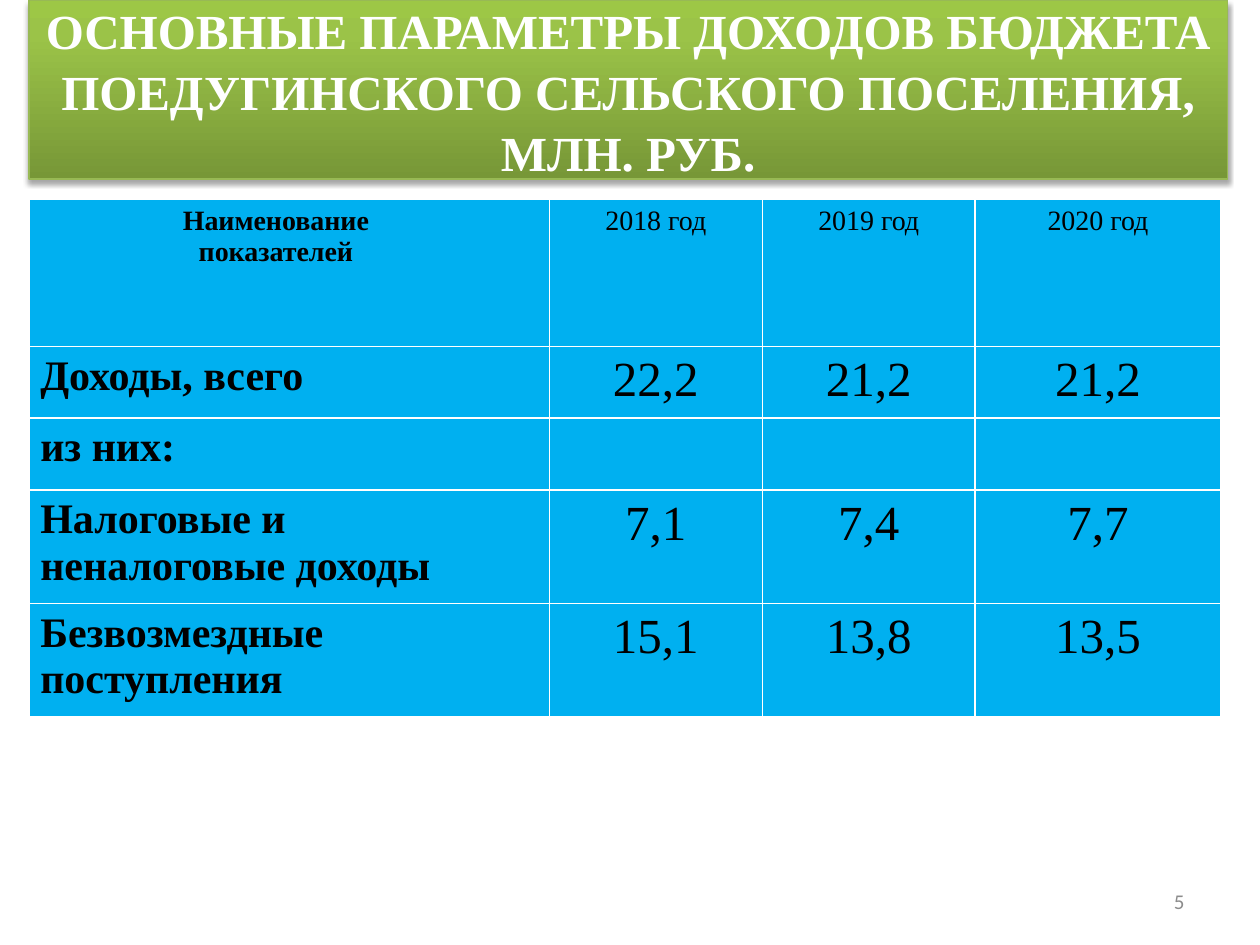
from dataclasses import dataclass

from lxml import etree
from pptx import Presentation
from pptx.dml.color import RGBColor
from pptx.enum.text import MSO_ANCHOR, MSO_AUTO_SIZE, PP_ALIGN
from pptx.oxml.ns import qn
from pptx.util import Inches, Pt

LEFT, CENTER, RIGHT = PP_ALIGN.LEFT, PP_ALIGN.CENTER, PP_ALIGN.RIGHT
MIDDLE = MSO_ANCHOR.MIDDLE
TITLE_ONLY = 5


@dataclass(frozen=True)
class Theme:
    font: str = "Times New Roman"
    number_font: str = "Calibri"
    white: str = "FFFFFF"
    black: str = "000000"
    gray: str = "8C8C8C"
    cell: str = "00B0F0"
    title_line: str = "98B955"
    title_gradient: tuple = ((0, "779737"), (80, "9BC348"), (100, "9DC746"))
    title_size: int = 28
    header_size: int = 16
    label_size: int = 24
    value_size: int = 28
    number_size: int = 12


TITLE = "ОСНОВНЫЕ ПАРАМЕТРЫ ДОХОДОВ БЮДЖЕТА ПОЕДУГИНСКОГО СЕЛЬСКОГО ПОСЕЛЕНИЯ, МЛН. РУБ."
BUDGET_ROWS = [
    ("Наименование\nпоказателей", "2018 год", "2019 год", "2020 год"),
    ("Доходы, всего", "22,2", "21,2", "21,2"),
    ("из них:", "", "", ""),
    ("Налоговые и неналоговые доходы", "7,1", "7,4", "7,7"),
    ("Безвозмездные поступления", "15,1", "13,8", "13,5"),
]
COLUMN_WIDTHS = (4.13, 1.69, 1.69, 1.95)
ROW_HEIGHTS = (1.17, 0.57, 0.57, 0.9, 0.9)


def add_child(parent, tag, **attributes):
    values = {name: str(value) for name, value in attributes.items()}
    return etree.SubElement(parent, qn(tag), values)


class SlideBuilder:
    def __init__(self, slide, theme):
        self.slide = slide
        self.theme = theme

    def format_text(self, text_frame, size, color, align, bold=False, font=None):
        for paragraph in text_frame.paragraphs:
            paragraph.alignment = align
            for run in paragraph.runs:
                run.font.name = font or self.theme.font
                run.font.size = Pt(size)
                run.font.bold = bold
                run.font.color.rgb = RGBColor.from_string(color)

    def title(self, text, left, top, width, height):
        shape = self.slide.shapes.title
        shape.left, shape.top = Inches(left), Inches(top)
        shape.width, shape.height = Inches(width), Inches(height)
        text_frame = shape.text_frame
        text_frame.text = text
        text_frame.word_wrap = True
        text_frame.auto_size = MSO_AUTO_SIZE.NONE
        text_frame.vertical_anchor = MIDDLE
        text_frame.paragraphs[0].line_spacing = 1.04
        self.format_text(text_frame, self.theme.title_size, self.theme.white, CENTER, True)
        self.gradient(shape, self.theme.title_gradient)
        shape.line.color.rgb = RGBColor.from_string(self.theme.title_line)
        shape.line.width = Pt(0.75)
        self.shadow(shape)

    def gradient(self, shape, stops):
        """Fill the shape from bottom to top with (percent, colour) stops."""
        shape.fill.gradient()
        shape.fill.gradient_angle = 90
        stop_list = shape.element.spPr.find(".//" + qn("a:gsLst"))
        for old_stop in list(stop_list):
            stop_list.remove(old_stop)
        for percent, color in stops:
            stop = add_child(stop_list, "a:gs", pos=percent * 1000)
            add_child(stop, "a:srgbClr", val=color)

    def shadow(self, shape):
        effects = add_child(shape.element.spPr, "a:effectLst")
        outer = add_child(effects, "a:outerShdw", blurRad=Pt(3.1), dist=Pt(1.8),
                          dir=90 * 60000, rotWithShape=0)
        color = add_child(outer, "a:srgbClr", val=self.theme.black)
        add_child(color, "a:alpha", val=35000)

    def table(self, rows, left, top, column_widths, row_heights):
        table = self.slide.shapes.add_table(
            len(rows), len(column_widths), Inches(left), Inches(top),
            Inches(sum(column_widths)), Inches(sum(row_heights))).table
        for column, width in zip(table.columns, column_widths):
            column.width = Inches(width)
        for row, height in zip(table.rows, row_heights):
            row.height = Inches(height)
        for row_index, texts in enumerate(rows):
            for column_index, text in enumerate(texts):
                is_header, is_label = row_index == 0, column_index == 0
                size = self.theme.label_size if is_label else self.theme.value_size
                if is_header:
                    size = self.theme.header_size
                align = LEFT if is_label and not is_header else CENTER
                cell = table.cell(row_index, column_index)
                cell.text_frame.text = text
                self.format_text(cell.text_frame, size, self.theme.black, align, is_label)
                self.cell_style(cell)
        table.cell(0, 0).margin_right = Inches(0.3)

    def cell_style(self, cell):
        cell.margin_left = cell.margin_right = Inches(0.09)
        cell.margin_top = cell.margin_bottom = Inches(0.05)
        properties = cell._tc.get_or_add_tcPr()
        for side in ("a:lnL", "a:lnR", "a:lnT", "a:lnB"):
            line = add_child(properties, side, w=Pt(1))
            fill = add_child(line, "a:solidFill")
            add_child(fill, "a:srgbClr", val=self.theme.white)
        cell.fill.solid()
        cell.fill.fore_color.rgb = RGBColor.from_string(self.theme.cell)

    def slide_number(self, text, left, top, width, height):
        text_box = self.slide.shapes.add_textbox(
            Inches(left), Inches(top), Inches(width), Inches(height))
        text_frame = text_box.text_frame
        text_frame.text = text
        text_frame.word_wrap = True
        text_frame.vertical_anchor = MIDDLE
        self.format_text(text_frame, self.theme.number_size, self.theme.gray, RIGHT,
                         font=self.theme.number_font)


def main():
    presentation = Presentation()
    presentation.slide_width, presentation.slide_height = Inches(10), Inches(7.5)
    slide = presentation.slides.add_slide(presentation.slide_layouts[TITLE_ONLY])
    builder = SlideBuilder(slide, Theme())
    builder.title(TITLE, 0.23, 0, 9.51, 1.42)
    builder.table(BUDGET_ROWS, 0.23, 1.58, COLUMN_WIDTHS, ROW_HEIGHTS)
    builder.slide_number("5", 7.17, 6.95, 2.33, 0.4)
    presentation.save("out.pptx")


if __name__ == "__main__":
    main()
